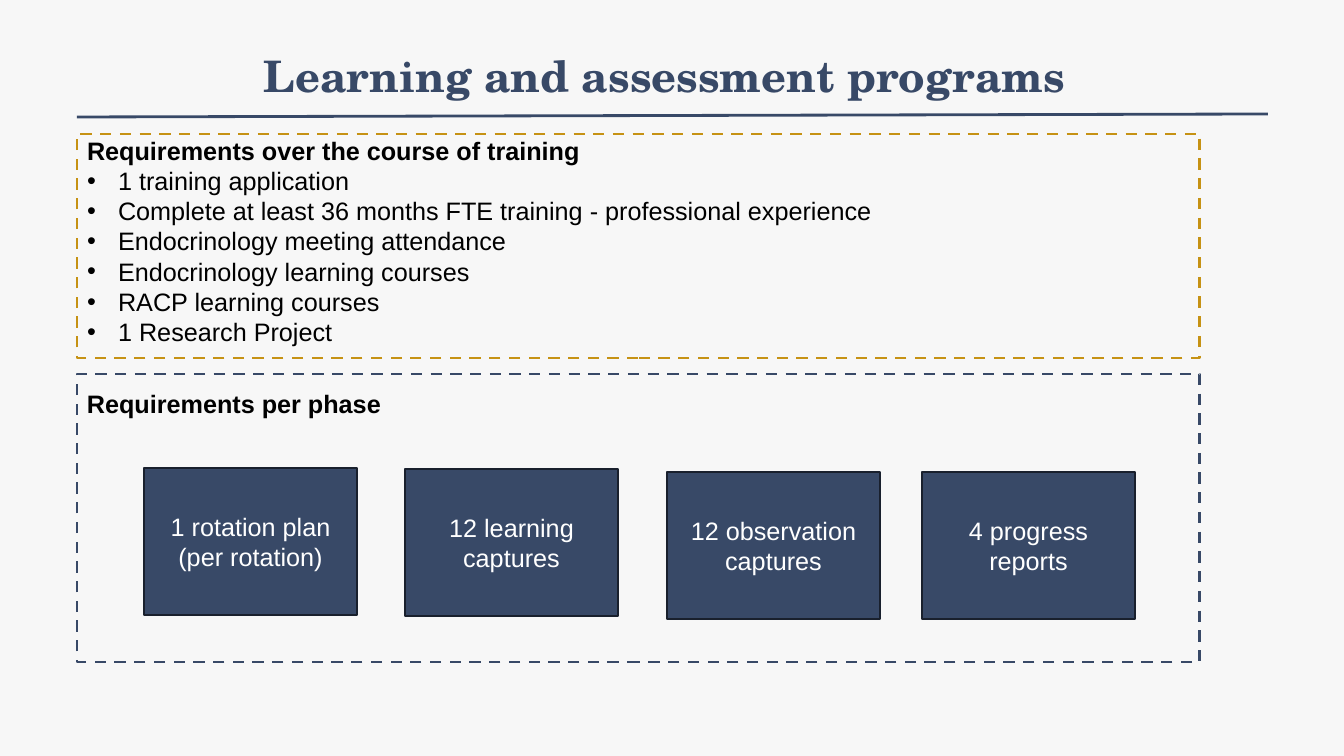
from lxml import etree
from pptx import Presentation
from pptx.dml.color import RGBColor
from pptx.enum.dml import MSO_LINE
from pptx.enum.shapes import MSO_CONNECTOR, MSO_SHAPE
from pptx.enum.text import MSO_ANCHOR, MSO_AUTO_SIZE, PP_ALIGN
from pptx.oxml.ns import qn
from pptx.util import Emu, Pt

RECTANGLE = MSO_SHAPE.RECTANGLE
STRAIGHT = MSO_CONNECTOR.STRAIGHT
DASH = MSO_LINE.DASH
MIDDLE, TOP = MSO_ANCHOR.MIDDLE, MSO_ANCHOR.TOP
LEFT, CENTER = PP_ALIGN.LEFT, PP_ALIGN.CENTER
FIT_SHAPE, NO_FIT = MSO_AUTO_SIZE.SHAPE_TO_FIT_TEXT, MSO_AUTO_SIZE.NONE

COLORS = {
    "background": "F7F7F7",
    "navy": "384967",
    "navy_edge": "19202D",
    "gold": "C69214",
    "black": "000000",
    "white": "FFFFFF",
}

SLIDE_WIDTH, SLIDE_HEIGHT = 1344, 756
EMU_PER_PX = 12192000 / SLIDE_WIDTH
BULLET_INDENT = 31
CARD_WIDTH, CARD_HEIGHT = 213, 147

TRAINING_ITEMS = [
    "1 training application",
    "Complete at least 36 months FTE training - professional experience",
    "Endocrinology meeting attendance",
    "Endocrinology learning courses",
    "RACP learning courses",
    "1 Research Project",
]
# Left, top and text of each card
PHASE_CARDS = [
    (144, 468, "1 rotation plan (per rotation)"),
    (405, 469, "12 learning captures"),
    (667, 472, "12 observation captures"),
    (922, 472, "4 progress reports"),
]


def px(length):
    return Emu(round(length * EMU_PER_PX))


def color(name):
    return RGBColor.from_string(COLORS[name])


def place(shape, left, top, width, height):
    shape.left, shape.top = px(left), px(top)
    shape.width, shape.height = px(width), px(height)


def set_bullet(para, bulleted):
    properties = para._p.get_or_add_pPr()
    indent = px(BULLET_INDENT) if bulleted else 0
    properties.set("marL", str(indent))
    properties.set("indent", str(-indent))
    if bulleted:
        etree.SubElement(properties, qn("a:buFont"), typeface="Arial")
        etree.SubElement(properties, qn("a:buChar"), char="•")
    else:
        etree.SubElement(properties, qn("a:buNone"))


def write(para, text, size=18, font="Arial", ink="black", bold=False,
          align=LEFT, bulleted=False):
    set_bullet(para, bulleted)
    para.alignment = align
    para.space_before = Pt(0)
    span = para.add_run()
    span.text = text
    span.font.size = Pt(size)
    span.font.name = font
    span.font.bold = bold
    span.font.color.rgb = color(ink)


def set_frame(box, anchor=TOP, fit=NO_FIT):
    frame = box.text_frame
    frame.word_wrap = True
    frame.auto_size = fit
    frame.vertical_anchor = anchor
    return frame


def add_box(page, left, top, width, height, edge, fill=None, dash=None):
    box = page.shapes.add_shape(
        RECTANGLE, px(left), px(top), px(width), px(height))
    box.shadow.inherit = False
    if fill:
        box.fill.solid()
        box.fill.fore_color.rgb = color(fill)
    else:
        box.fill.background()
    box.line.color.rgb = color(edge)
    box.line.width = Pt(2)
    if dash:
        box.line.dash_style = dash
    return box


def add_title(page, text):
    title = page.shapes.title
    place(title, 160, 29, 1009, 92)
    frame = set_frame(title, anchor=MIDDLE)
    frame.margin_left = frame.margin_right = px(7)
    frame.margin_top = frame.margin_bottom = px(4)
    write(frame.paragraphs[0], text, size=31, font="TeX Gyre Schola",
          ink="navy", bold=True, align=CENTER)


def add_rule(page):
    rule = page.shapes.add_connector(
        STRAIGHT, px(77), px(117), px(1268), px(114))
    rule.line.color.rgb = color("navy")
    rule.line.width = Pt(2)
    etree.SubElement(rule._element.spPr, qn("a:effectLst"))


def add_training_list(page, heading, items):
    body = page.placeholders[1]
    place(body, 77, 130, 992, 224)
    frame = set_frame(body, fit=FIT_SHAPE)
    write(frame.paragraphs[0], heading, bold=True)
    for item in items:
        write(frame.add_paragraph(), item, bulleted=True)


def add_heading(page, text):
    box = page.shapes.add_textbox(px(77), px(383), px(672), px(40))
    frame = set_frame(box, fit=FIT_SHAPE)
    write(frame.paragraphs[0], text, bold=True)


def add_card(page, left, top, text):
    card = add_box(page, left, top, CARD_WIDTH, CARD_HEIGHT,
                   "navy_edge", fill="navy")
    frame = set_frame(card, anchor=MIDDLE)
    write(frame.paragraphs[0], text, ink="white", align=CENTER)


def main():
    deck = Presentation()
    deck.slide_width, deck.slide_height = px(SLIDE_WIDTH), px(SLIDE_HEIGHT)
    page = deck.slides.add_slide(deck.slide_layouts[1])
    page.background.fill.solid()
    page.background.fill.fore_color.rgb = color("background")

    # Title with its rule
    add_title(page, "Learning and assessment programs")
    add_rule(page)

    # Requirements over the whole training
    add_box(page, 77, 134, 1123, 224, "gold", dash=DASH)
    add_training_list(
        page, "Requirements over the course of training", TRAINING_ITEMS)

    # Requirements in each phase
    add_box(page, 77, 374, 1123, 288, "navy", dash=DASH)
    add_heading(page, "Requirements per phase")
    for left, top, text in PHASE_CARDS:
        add_card(page, left, top, text)

    deck.save("out.pptx")


if __name__ == "__main__":
    main()
